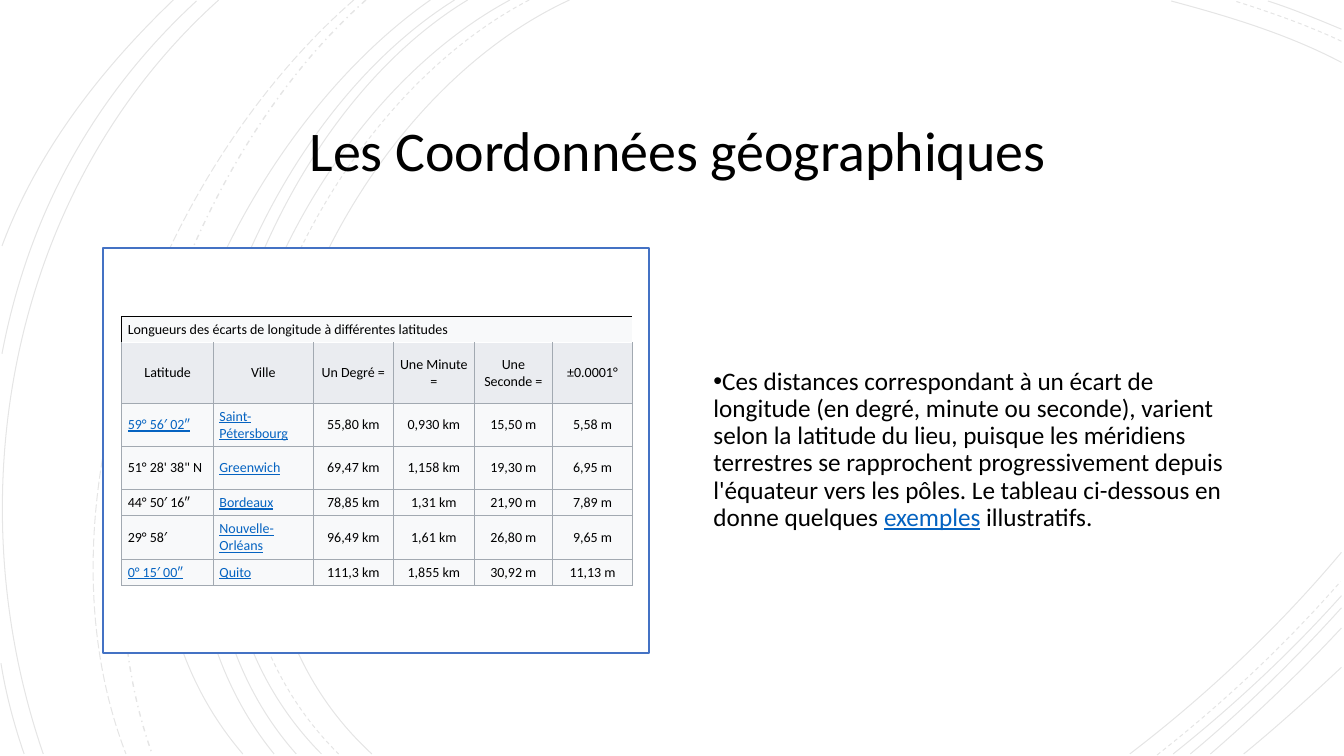
"""Build the slide on geographic coordinates with its table of longitude gaps."""
from lxml.etree import SubElement
from pptx import Presentation
from pptx.dml.color import RGBColor
from pptx.enum.dml import MSO_LINE as DASH
from pptx.enum.shapes import MSO_SHAPE as SHAPE
from pptx.enum.text import MSO_ANCHOR as ANCHOR, PP_ALIGN as ALIGN
from pptx.oxml.ns import qn
from pptx.util import Cm, Pt

FONT = "Calibri"
CM_PER_INCH = 2.54
COLORS = {
    "text": "000000", "link": "0563C1", "panel": "FFFFFF", "panel_line": "4472C4",
    "grid": "A2A9B1", "header": "EAECF0", "cell": "F8F9FA",
}
ARCS = {
    DASH.SOLID: [
        ((5.65, 0), (3.15, 1.15), (1.43, 5.4), (3.69, 7.48)),
        ((13.31, 0.62), (12.78, 0.34), (12.18, 0.16), (11.62, 0.01)),
        ((11.21, 7.48), (11.97, 6.9), (12.69, 6.22), (13.31, 5.48)),
        ((5.06, 0), (2.7, 1.27), (1.1, 5.37), (3.19, 7.48)),
        ((13.31, 0.29), (13.07, 0.19), (12.83, 0.09), (12.58, 0.01)),
        ((11.64, 7.48), (12.23, 7.01), (12.8, 6.48), (13.31, 5.91)),
        ((4.64, 0), (2.44, 1.33), (1.1, 5.41), (2.94, 7.48)),
        ((11.81, 7.48), (12.34, 7.04), (12.84, 6.55), (13.31, 6.03)),
        ((4.51, 0), (2.31, 1.38), (0.97, 5.33), (2.72, 7.48)),
        ((12.01, 7.48), (12.46, 7.09), (12.9, 6.67), (13.31, 6.23)),
        ((4.27, 0), (2.17, 1.47), (0.53, 5.29), (2.41, 7.48)),
        ((12.34, 7.48), (12.67, 7.21), (12.99, 6.92), (13.31, 6.62)),
        ((2.17, 0), (0.11, 1.85), (-0.46, 4.9), (0.43, 7.48)),
        ((1.95, 0.01), (0.92, 0.96), (0.28, 2.14), (0.02, 3.51)),
        ((0.01, 6.58), (0.06, 6.89), (0.14, 7.19), (0.24, 7.48)),
        ((1.72, 0), (1, 0.69), (0.37, 1.5), (0.02, 2.44)),
    ],
    DASH.DASH: [
        ((5.25, 0), (2.85, 1.25), (1.23, 5.37), (3.36, 7.48)),
        ((13.31, 0.41), (12.97, 0.25), (12.6, 0.12), (12.25, 0.01)),
        ((11.48, 7.49), (12.13, 6.98), (12.75, 6.4), (13.3, 5.77)),
    ],
    DASH.DASH_DOT: [((3.63, 0), (1.76, 1.66), (0.65, 5.09), (1.51, 7.48))],
    DASH.LONG_DASH: [((3.51, 0), (1.57, 1.69), (0.29, 4.99), (1.25, 7.48))],
}
CAPTION = "Longueurs des écarts de longitude à différentes latitudes"
HEADERS = ["Latitude", "Ville", "Un Degré =", "Une Minute =", "Une Seconde =", "±0.0001°"]
CITIES = [
    ["59° 56′ 02″", "Saint-Pétersbourg", "55,80 km", "0,930 km", "15,50 m", "5,58 m"],
    ["51° 28' 38\" N", "Greenwich", "69,47 km", "1,158 km", "19,30 m", "6,95 m"],
    ["44° 50′ 16″", "Bordeaux", "78,85 km", "1,31 km", "21,90 m", "7,89 m"],
    ["29° 58′", "Nouvelle-Orléans", "96,49 km", "1,61 km", "26,80 m", "9,65 m"],
    ["0° 15′ 00″", "Quito", "111,3 km", "1,855 km", "30,92 m", "11,13 m"],
]
LINKED_LATITUDES = {"59° 56′ 02″", "0° 15′ 00″"}
COL_WIDTHS = [2.31, 2.51, 2.03, 2.03, 1.98, 2.01]
ROW_HEIGHTS = [0.66, 1.52, 1.09, 1.09, 0.66, 1.09, 0.66]
BODY = [
    ("Ces distances correspondant à un écart de longitude (en degré, minute ou seconde), "
     "varient selon la latitude du lieu, puisque les méridiens terrestres se rapprochent "
     "progressivement depuis l'équateur vers les pôles. Le tableau ci-dessous en donne "
     "quelques ", False),
    ("exemples", True),
    (" illustratifs.", False),
]


def rgb(name):
    return RGBColor.from_string(COLORS[name])


def add_run(p, text, size, link=False):
    r = p.add_run()
    r.text = text
    r.font.name, r.font.size = FONT, Pt(size)
    r.font.color.rgb = rgb("link" if link else "text")
    if link:
        r.font.underline = True


def add_arc(group, points, dash):
    start, *rest = [tuple(Cm(CM_PER_INCH * v) for v in point) for point in points]
    builder = group.shapes.build_freeform(*start, scale=1.0)
    builder.add_line_segments(rest, close=False)
    sp = builder.convert_to_shape()
    outline = sp._element.find(".//" + qn("a:path"))
    curve = SubElement(outline, qn("a:cubicBezTo"))
    for segment in outline.findall(qn("a:lnTo")):
        curve.append(segment[0])
        outline.remove(segment)
    sp.shadow.inherit = False
    sp.fill.background()
    sp.line.color.rgb = rgb("text")
    sp.line.width = Pt(1 if dash == DASH.DASH_DOT else 0.75)
    sp.line.dash_style = dash
    color = sp._element.find(".//" + qn("a:ln")).find(".//" + qn("a:srgbClr"))
    SubElement(color, qn("a:alpha"), val="10000")


def add_arcs(s):
    group = s.shapes.add_group_shape()
    for dash, arcs in ARCS.items():
        for points in arcs:
            add_arc(group, points, dash)
    s.shapes._spTree.insert(2, group._element)


def set_title(s, text):
    sp = s.shapes.title
    sp.left, sp.top, sp.width, sp.height = Cm(2.51), Cm(2.21), Cm(29.13), Cm(3.3)
    tf = sp.text_frame
    tf.vertical_anchor = ANCHOR.MIDDLE
    p = tf.paragraphs[0]
    p.alignment, p.line_spacing = ALIGN.CENTER, 0.9
    add_run(p, text, 40)


def add_panel(s):
    sp = s.shapes.add_shape(SHAPE.RECTANGLE, Cm(2.59), Cm(6.25), Cm(13.77), Cm(10.21))
    sp.shadow.inherit = False
    sp.fill.solid()
    sp.fill.fore_color.rgb = rgb("panel")
    sp.line.color.rgb = rgb("panel_line")
    sp.line.width = Pt(1.5)


def add_body(s):
    tf = s.shapes.add_textbox(Cm(17.73), Cm(6.2), Cm(13.97), Cm(10.29)).text_frame
    tf.word_wrap = True
    tf.vertical_anchor = ANCHOR.MIDDLE
    p = tf.paragraphs[0]
    p.line_spacing, p.space_after = 0.9, Pt(6)
    props = p._p.get_or_add_pPr()
    props.set("marL", "0")
    props.set("indent", str(-Cm(0.635)))
    SubElement(props, qn("a:buFont"), typeface="Arial")
    SubElement(props, qn("a:buChar"), char="•")
    for text, link in BODY:
        add_run(p, text, 18, link)


def set_borders(cell, sides, color):
    props = cell._tc.get_or_add_tcPr()
    for side in sides:
        ln = SubElement(props, qn(f"a:ln{side}"), w=str(Pt(0.75)))
        SubElement(SubElement(ln, qn("a:solidFill")), qn("a:srgbClr"), val=COLORS[color])


def format_cell(cell, fill, sides, border):
    set_borders(cell, sides, border)
    cell.fill.solid()
    cell.fill.fore_color.rgb = rgb(fill)
    cell.vertical_anchor = ANCHOR.MIDDLE
    cell.margin_left = cell.margin_right = Cm(0.15)
    cell.margin_top = cell.margin_bottom = Cm(0.08)


def add_caption(table):
    last = len(COL_WIDTHS) - 1
    for col in range(last + 1):
        sides = "L" * (col == 0) + "R" * (col == last) + "TB"
        format_cell(table.cell(0, col), "cell", sides, "text")
    table.cell(0, 0).merge(table.cell(0, last))
    add_run(table.cell(0, 0).text_frame.paragraphs[0], CAPTION, 10)


def add_distance_table(s):
    frame = s.shapes.add_table(len(ROW_HEIGHTS), len(COL_WIDTHS), Cm(3.07), Cm(7.98),
                               Cm(sum(COL_WIDTHS)), Cm(sum(ROW_HEIGHTS)))
    table = frame.table
    table.first_row = table.horz_banding = False
    for column, width in zip(table.columns, COL_WIDTHS):
        column.width = Cm(width)
    for row, height in zip(table.rows, ROW_HEIGHTS):
        row.height = Cm(height)
    add_caption(table)
    for i, values in enumerate([HEADERS] + CITIES, start=1):
        is_header = i == 1
        for j, text in enumerate(values):
            cell = table.cell(i, j)
            format_cell(cell, "header" if is_header else "cell",
                        "LRB" if is_header else "LRTB", "grid")
            p = cell.text_frame.paragraphs[0]
            p.alignment = ALIGN.CENTER if is_header or j > 1 else ALIGN.LEFT
            link = not is_header and (j == 1 or text in LINKED_LATITUDES)
            add_run(p, text, 10, link)


def main():
    prs = Presentation()
    prs.slide_width, prs.slide_height = Cm(33.87), Cm(19.05)
    s = prs.slides.add_slide(prs.slide_layouts[5])
    add_arcs(s)
    set_title(s, "Les Coordonnées géographiques")
    add_panel(s)
    add_body(s)
    add_distance_table(s)
    prs.save("out.pptx")


if __name__ == "__main__":
    main()
